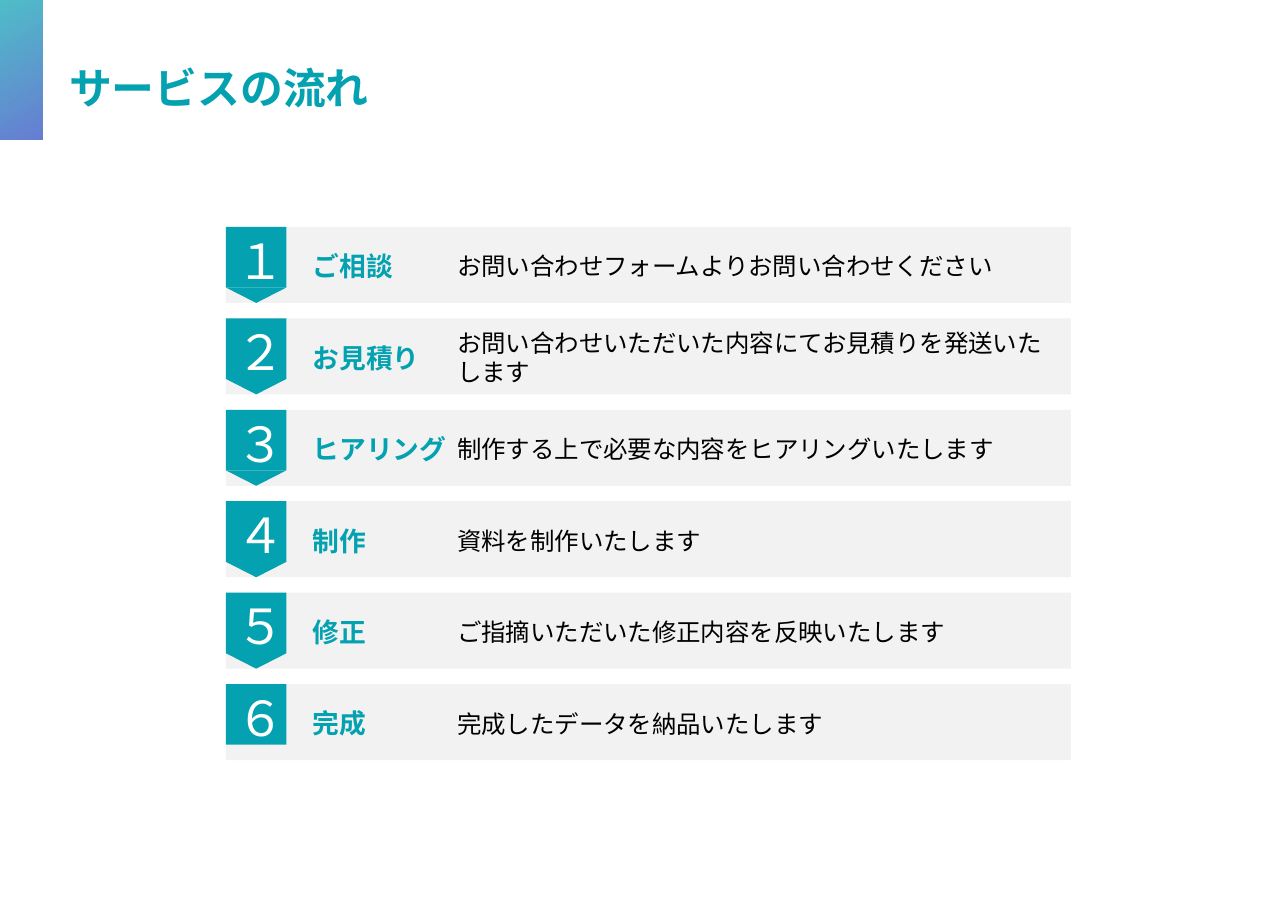
from dataclasses import dataclass

from lxml import etree
from pptx import Presentation, util as u
from pptx.dml.color import RGBColor
from pptx.enum import shapes, text
from pptx.oxml.ns import qn


@dataclass(frozen=True)
class Theme:
    font: str = "Noto Sans CJK JP"
    teal: str = "04A2B1"
    blue: str = "2746C0"
    band: str = "F2F2F2"
    white: str = "FFFFFF"
    black: str = "000000"
    title_size: float = 28
    number_size: float = 31.6
    label_size: float = 17.5
    body_size: float = 16


class Deck:
    def __init__(self, theme, width, height):
        self.theme = theme
        self.prs = Presentation()
        self.prs.slide_width = u.Inches(width)
        self.prs.slide_height = u.Inches(height)
        self.s = self.prs.slides.add_slide(self.prs.slide_layouts[6])

    def shape(self, kind, box, color):
        sp = self.s.shapes.add_shape(kind, *map(u.Inches, box))
        sp.shadow.inherit = False
        sp.line.fill.background()
        sp.fill.solid()
        sp.fill.fore_color.rgb = RGBColor.from_string(color)
        return sp

    def rect(self, box, color):
        return self.shape(shapes.MSO_SHAPE.RECTANGLE, box, color)

    def pointer(self, box, color):
        """Triangle that points down."""
        self.shape(shapes.MSO_SHAPE.ISOSCELES_TRIANGLE, box, color).rotation = 180

    def gradient(self, box, colors, angle, opacity):
        sp = self.rect(box, colors[0])
        sp.fill.gradient()
        sp.fill.gradient_angle = angle
        for stop, color in zip(sp.fill.gradient_stops, colors):
            stop.color.rgb = RGBColor.from_string(color)
        for clr in sp._element.spPr.iter(qn("a:srgbClr")):
            etree.SubElement(clr, qn("a:alpha"), val=str(opacity * 1000))

    def label(self, sp, words, size, color, bold=False, top=0.05, bottom=0.05,
              align=text.PP_ALIGN.LEFT):
        tf = sp.text_frame
        tf.word_wrap = True
        tf.vertical_anchor = text.MSO_ANCHOR.MIDDLE
        tf.margin_left = tf.margin_right = u.Inches(0.1)
        tf.margin_top, tf.margin_bottom = u.Inches(top), u.Inches(bottom)
        p = tf.paragraphs[0]
        p.text = words
        p.alignment = align
        p.font.name = self.theme.font
        p.font.size = u.Pt(size)
        p.font.bold = bold
        p.font.color.rgb = RGBColor.from_string(color)
        # Japanese glyphs take the East Asian typeface
        etree.SubElement(p.font._element, qn("a:ea"), typeface=self.theme.font)
        return p

    def text(self, box, words, size, color, **style):
        tb = self.s.shapes.add_textbox(*map(u.Inches, box))
        return self.label(tb, words, size, color, **style)


STEPS = [
    ("１", "ご相談", "お問い合わせフォームよりお問い合わせください"),
    ("２", "お見積り", "お問い合わせいただいた内容にてお見積りを発送いたします"),
    ("３", "ヒアリング", "制作する上で必要な内容をヒアリングいたします"),
    ("４", "制作", "資料を制作いたします"),
    ("５", "修正", "ご指摘いただいた修正内容を反映いたします"),
    ("６", "完成", "完成したデータを納品いたします"),
]
LEFT, TOP, PITCH = 2.05, 2.06, 0.83
ROW_W, ROW_H, BADGE, TIP = 7.67, 0.69, 0.55, 0.14


def main():
    t = Theme()
    deck = Deck(t, 11.69, 8.27)

    # Header
    deck.gradient((0, 0, 0.39, 1.27), (t.teal, t.blue), angle=300, opacity=70)
    title = deck.text((0.53, 0.47, 11.16, 0.6), "サービスの流れ",
                      t.title_size, t.teal, bold=True)
    title.line_spacing = 1.1

    # Steps
    for i, (number, name, body) in enumerate(STEPS):
        y = TOP + i * PITCH
        deck.rect((LEFT, y, ROW_W, ROW_H), t.band)
        badge = deck.rect((LEFT, y, BADGE, BADGE), t.teal)
        deck.label(badge, number, t.number_size, t.white, bottom=0,
                   align=text.PP_ALIGN.CENTER)
        if i < len(STEPS) - 1:
            deck.pointer((LEFT, y + ROW_H - TIP, BADGE, TIP), t.teal)
        deck.text((2.74, y, 1.5, ROW_H), name, t.label_size, t.teal,
                  bold=True, top=0.07)
        deck.text((4.05, y, 5.52, ROW_H), body, t.body_size, t.black, top=0.07)

    deck.prs.save("out.pptx")


if __name__ == "__main__":
    main()
